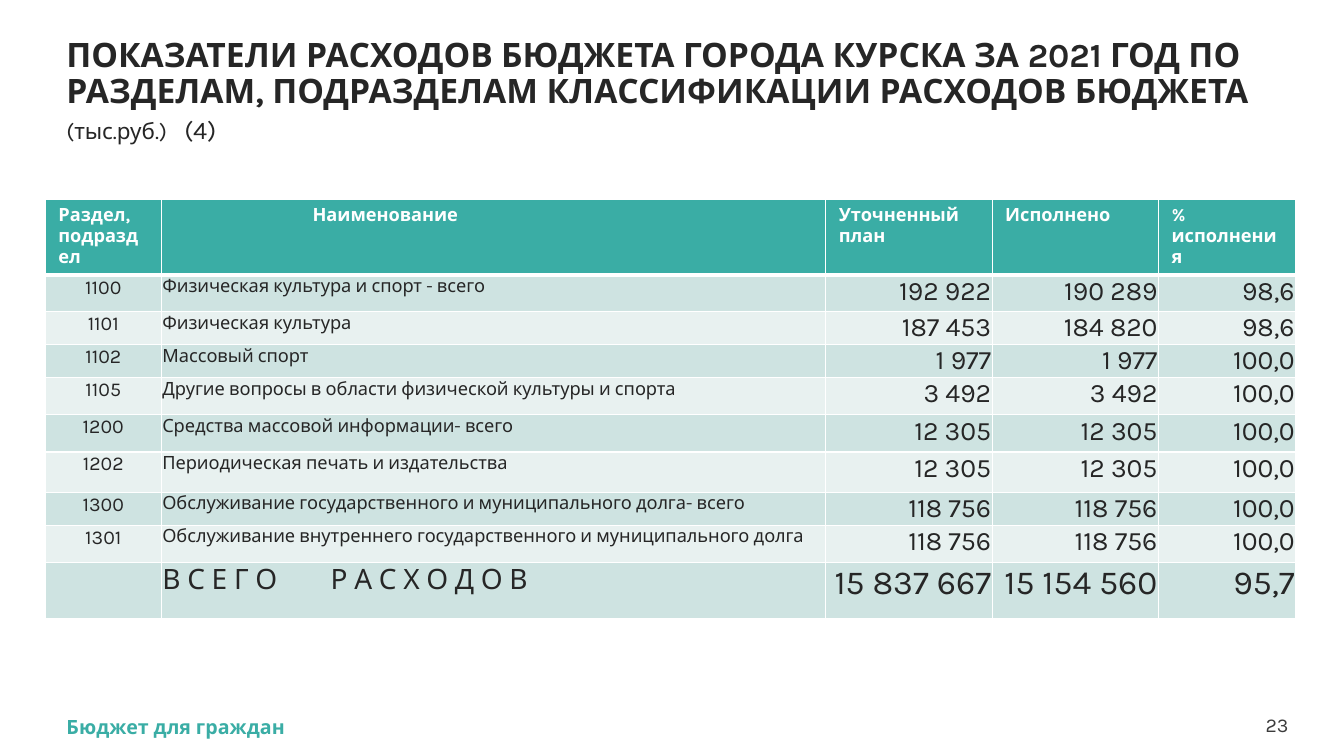
from lxml import etree
from pptx import Presentation
from pptx import util as u
from pptx.dml.color import RGBColor
from pptx.enum import text
from pptx.oxml import ns

TEAL = RGBColor(0x3A, 0xAD, 0xA5)
MINT = RGBColor(0xCE, 0xE3, 0xE1)
PALE = RGBColor(0xE8, 0xF1, 0xF0)
WHITE = RGBColor(0xFF, 0xFF, 0xFF)
DARK = RGBColor(0x26, 0x26, 0x26)
GRAY = RGBColor(0x3C, 0x3C, 0x3C)
FONT = "Karla"
LEFT, CENTER, RIGHT = text.PP_ALIGN.LEFT, text.PP_ALIGN.CENTER, text.PP_ALIGN.RIGHT

TITLE = [
    ("ПОКАЗАТЕЛИ РАСХОДОВ БЮДЖЕТА ГОРОДА КУРСКА ЗА 2021 ГОД ПО РАЗДЕЛАМ, "
     "ПОДРАЗДЕЛАМ КЛАССИФИКАЦИИ РАСХОДОВ БЮДЖЕТА ", 24, True),
    ("(тыс.руб.)", 16, False),
    ("\t", 24, True),
    ("(4)", 18, False),
]
FOOTER = [("Бюджет для граждан", 14, True)]
PAGE_NUMBER = [("23", 14, False)]

HEADER = ("Раздел, подраздел", "Наименование", "Уточненный план", "Исполнено", "% исполнения")
SECTIONS = [
    ("1100", "Физическая культура и спорт - всего", "192 922", "190 289", "98,6"),
    ("1101", "Физическая культура", "187 453", "184 820", "98,6"),
    ("1102", "Массовый спорт", "1 977", "1 977", "100,0"),
    ("1105", "Другие вопросы в области физической культуры и спорта", "3 492", "3 492", "100,0"),
    ("1200", "Средства массовой информации- всего", "12 305", "12 305", "100,0"),
    ("1202", "Периодическая печать и издательства", "12 305", "12 305", "100,0"),
    ("1300", "Обслуживание государственного и муниципального долга- всего",
     "118 756", "118 756", "100,0"),
    ("1301", "Обслуживание внутреннего государственного и муниципального долга",
     "118 756", "118 756", "100,0"),
]
TOTAL = ("", "В С Е Г О\tР А С Х О Д О В", "15 837 667", "15 154 560", "95,7")

COLUMN_WIDTHS = (1.15, 6.59, 1.65, 1.65, 1.36)
ROW_HEIGHTS = (0.63, 0.36, 0.29, 0.25, 0.37, 0.37, 0.4, 0.32, 0.37, 0.56)
ALIGNMENTS = (CENTER, LEFT, RIGHT, RIGHT, RIGHT)
HEADER_SIZES = (13,) * 5
SECTION_SIZES = (14, 13, 19, 19, 19)
TOTAL_SIZES = (14, 20, 24, 24, 24)
NAME_HEADER_INDENT = 1.5


def apply(target, formats):
    for name, value in formats.items():
        setattr(target, name, value)


def add_tab_stop(paragraph, position):
    tabs = etree.SubElement(paragraph._p.get_or_add_pPr(), ns.qn("a:tabLst"))
    etree.SubElement(tabs, ns.qn("a:tab"), pos=str(u.Inches(position)), algn="l")


def add_runs(paragraph, runs, color):
    for words, size, bold in runs:
        run = paragraph.add_run()
        run.text = words
        apply(run.font, {"name": FONT, "size": u.Pt(size), "bold": bold})
        run.font.color.rgb = color


def add_text(slide, place, runs, color, frame_formats, paragraph_formats, tab=None):
    shape = slide.shapes.add_textbox(*map(u.Inches, place))
    frame = shape.text_frame
    apply(frame, {"word_wrap": True, **frame_formats})
    paragraph = frame.paragraphs[0]
    apply(paragraph, paragraph_formats)
    if tab:
        add_tab_stop(paragraph, tab)
    add_runs(paragraph, runs, color)


def set_borders(cell, top, bottom):
    properties = cell._tc.get_or_add_tcPr()
    widths = {"lnL": 1, "lnR": 1, "lnT": top, "lnB": bottom}
    for index, (side, width) in enumerate(widths.items()):
        line = etree.Element(ns.qn("a:" + side), w=str(u.Pt(width)))
        fill = etree.SubElement(line, ns.qn("a:solidFill"))
        etree.SubElement(fill, ns.qn("a:srgbClr"), val=str(WHITE))
        properties.insert(index, line)


def fill_cell(cell, words, size, alignment, row):
    header = row == 0
    cell.fill.solid()
    cell.fill.fore_color.rgb = TEAL if header else MINT if row % 2 else PALE
    side, top, bottom = (0.13, 0.05, 0.05) if header else (0.01, 0.01, 0)
    apply(cell, {
        "margin_left": u.Inches(side), "margin_right": u.Inches(side),
        "margin_top": u.Inches(top), "margin_bottom": u.Inches(bottom),
    })
    set_borders(cell, 3 if row == 1 else 1, 3 if header else 1)
    paragraph = cell.text_frame.paragraphs[0]
    paragraph.alignment = LEFT if header else alignment
    if "\t" in words:
        add_tab_stop(paragraph, 1.67)
    if words:
        add_runs(paragraph, [(words, size, header)], WHITE if header else DARK)


def add_budget_table(slide):
    rows = [HEADER, *SECTIONS, TOTAL]
    sizes = [HEADER_SIZES] + [SECTION_SIZES] * len(SECTIONS) + [TOTAL_SIZES]
    place = map(u.Inches, (0.45, 1.98, sum(COLUMN_WIDTHS), sum(ROW_HEIGHTS)))
    table = slide.shapes.add_table(len(rows), len(HEADER), *place).table
    apply(table, {"first_row": False, "horz_banding": False})
    for column, width in zip(table.columns, COLUMN_WIDTHS):
        column.width = u.Inches(width)
    for row, (values, height) in enumerate(zip(rows, ROW_HEIGHTS)):
        table.rows[row].height = u.Inches(height)
        for column, words in enumerate(values):
            fill_cell(table.cell(row, column), words, sizes[row][column],
                      ALIGNMENTS[column], row)
    table.cell(0, 1).margin_left = u.Inches(NAME_HEADER_INDENT)


def main():
    presentation = Presentation()
    apply(presentation, {"slide_width": u.Inches(13.33), "slide_height": u.Inches(7.5)})
    slide = presentation.slides.add_slide(presentation.slide_layouts[6])
    no_margins = dict.fromkeys(
        ("margin_left", "margin_top", "margin_right", "margin_bottom"), 0)
    add_text(slide, (12.53, 7.07, 0.25, 0.24), PAGE_NUMBER, GRAY,
             {**no_margins, "vertical_anchor": text.MSO_ANCHOR.MIDDLE}, {"alignment": RIGHT})
    add_text(slide, (0.66, 7.09, 11.8, 0.24), FOOTER, TEAL, no_margins, {"alignment": LEFT})
    add_text(slide, (0.56, 0.33, 12.7, 0.83), TITLE, DARK,
             {"auto_size": text.MSO_AUTO_SIZE.SHAPE_TO_FIT_TEXT},
             {"line_spacing": 0.9}, tab=1.17)
    add_budget_table(slide)
    presentation.save("out.pptx")


if __name__ == "__main__":
    main()
